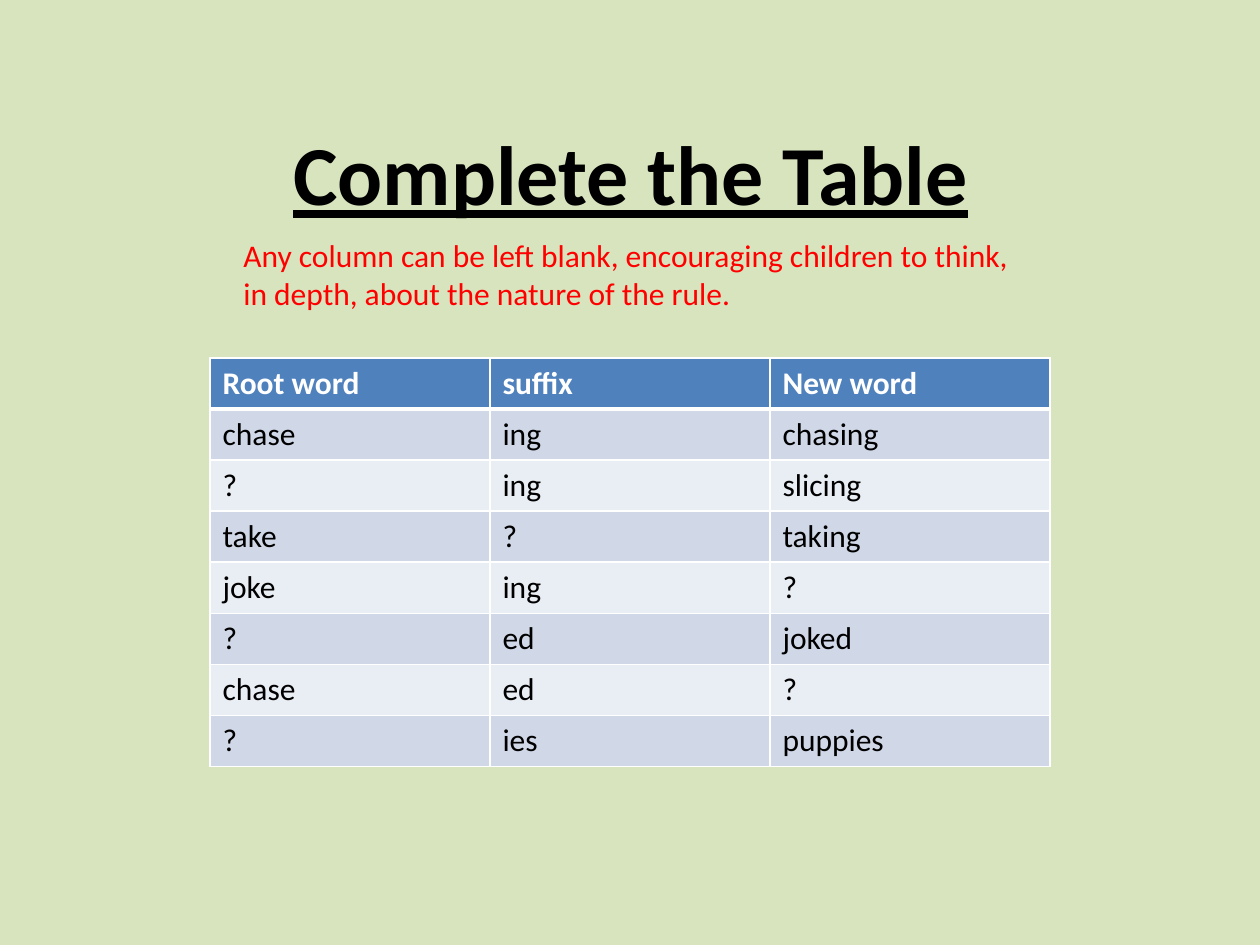
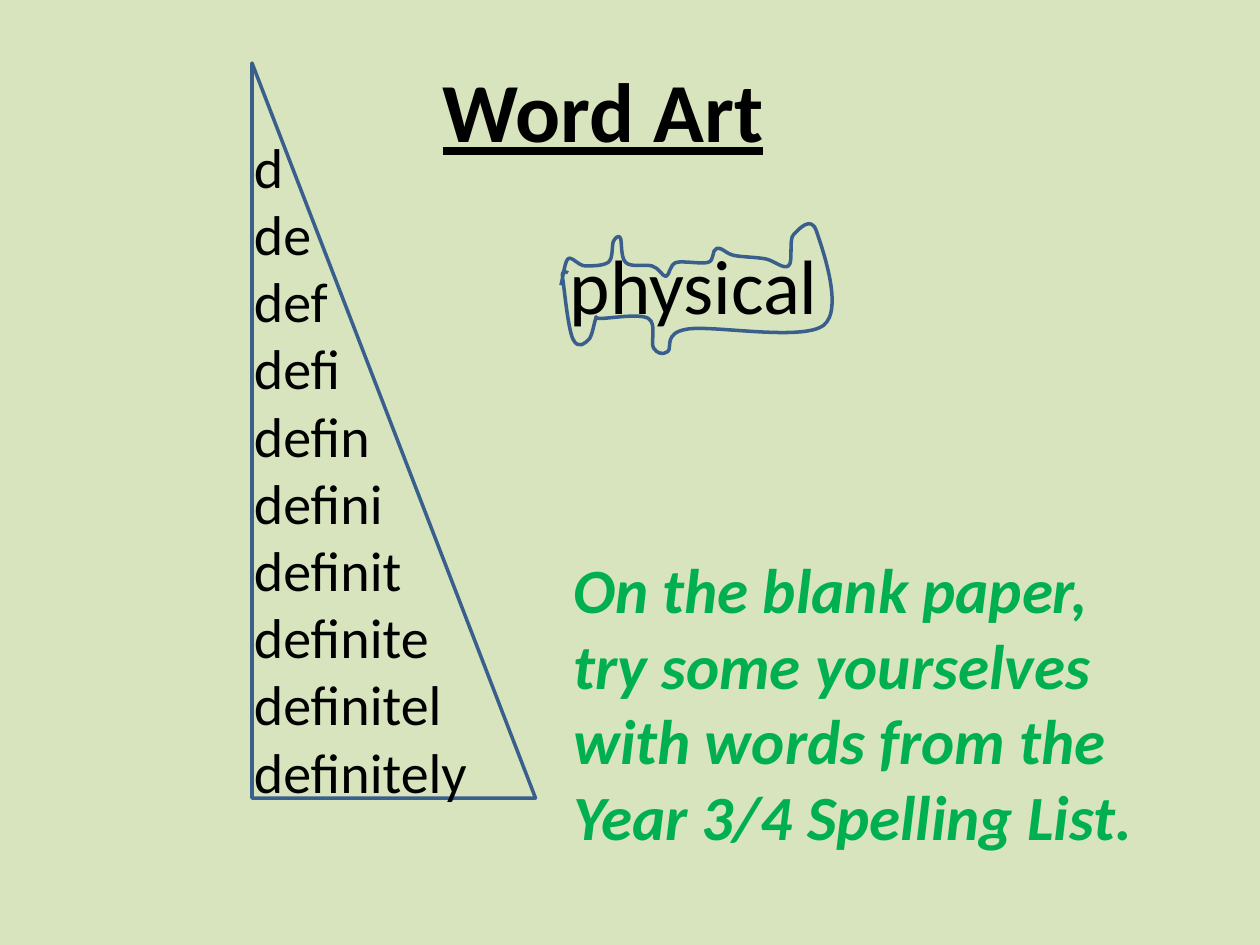
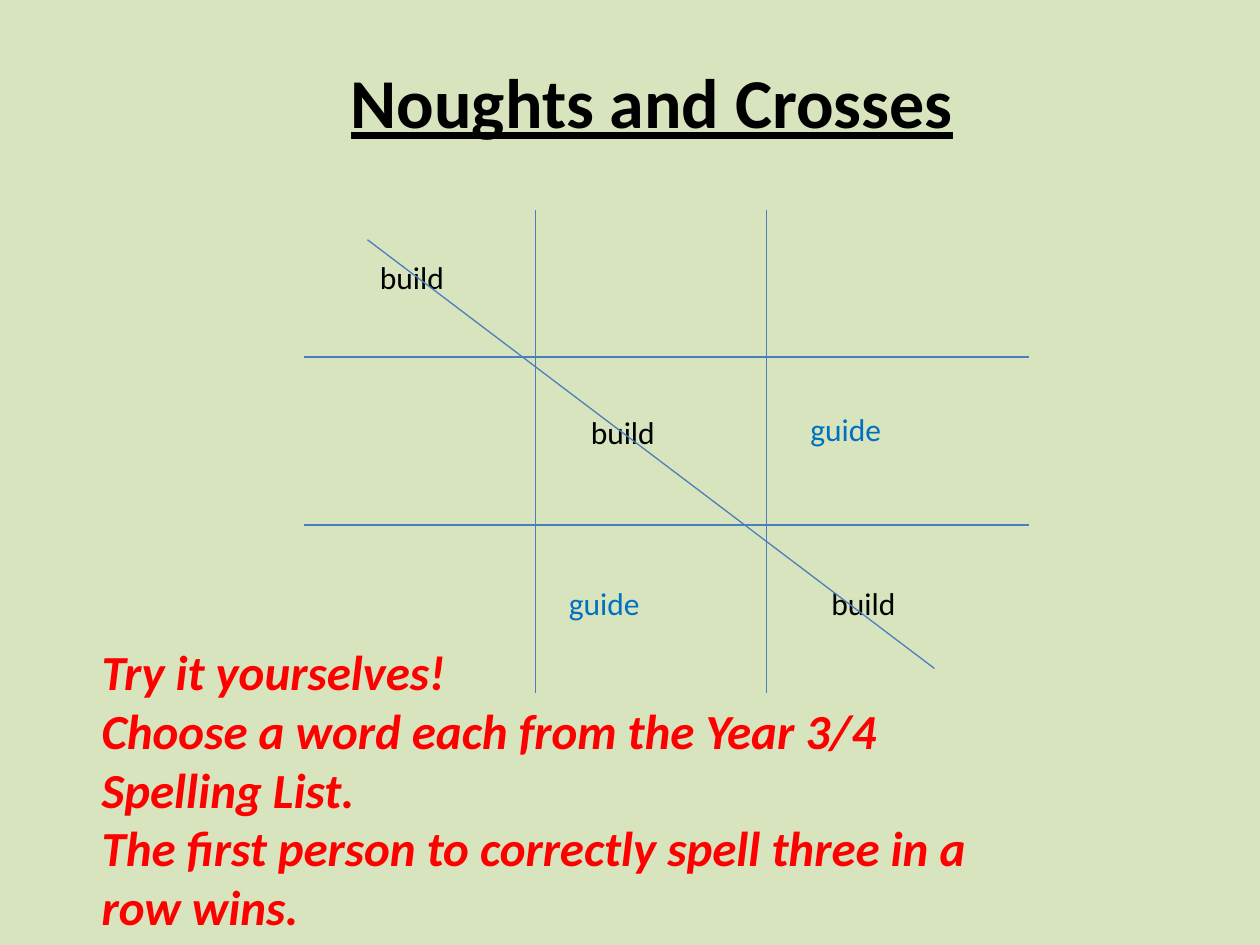
from dataclasses import dataclass

from lxml import etree
from pptx import Presentation
from pptx.dml.color import RGBColor
from pptx.enum.shapes import MSO_CONNECTOR, MSO_SHAPE
from pptx.enum.text import MSO_AUTO_SIZE, PP_ALIGN
from pptx.oxml.ns import qn
from pptx.util import Pt

STRAIGHT = MSO_CONNECTOR.STRAIGHT
RIGHT_TRIANGLE = MSO_SHAPE.RIGHT_TRIANGLE
GROW = MSO_AUTO_SIZE.SHAPE_TO_FIT_TEXT
LEFT, CENTER = PP_ALIGN.LEFT, PP_ALIGN.CENTER
BLANK_LAYOUT = 6


@dataclass(frozen=True)
class Theme:
    font: str = "Calibri"
    background: str = "D7E4BD"
    ink: str = "000000"
    white: str = "FFFFFF"
    red: str = "FF0000"
    green: str = "00B050"
    blue: str = "0070C0"
    outline: str = "3A5F8C"
    board: str = "4B7EBC"
    header: str = "4F81BD"
    bands: tuple = ("D0D8E8", "E9EDF4")
    small: int = 18
    task: int = 28
    pyramid: int = 32
    prompt: int = 36
    heading: int = 40
    word: int = 44
    title: int = 48


@dataclass(frozen=True)
class Box:
    left: float
    top: float
    width: float
    height: float

    def inner(self, x, y, width, height):
        return Box(self.left + x, self.top + y, width, height)

    def lengths(self):
        return [Pt(n) for n in (self.left, self.top, self.width, self.height)]


THEME = Theme()
TITLE = {"bold": True, "underline": True}
CALL = {"bold": True, "italic": True}

SUFFIX_ROWS = [
    ("Root word", "suffix", "New word"),
    ("chase", "ing", "chasing"),
    ("?", "ing", "slicing"),
    ("take", "?", "taking"),
    ("joke", "ing", "?"),
    ("?", "ed", "joked"),
    ("chase", "ed", "?"),
    ("?", "ies", "puppies"),
]

LETTER_CONTOUR = {
    "p bowl": [(0, 35), (4, 20), (14, 24)],
    "h stem": [(27, 22), (30, 10), (34, 8), (37, 22)],
    "y fork": [(52, 24), (60, 30), (66, 22)],
    "s top": [(84, 22)],
    "i dot": [(89, 14), (99, 18)],
    "ca top": [(117, 20), (130, 24)],
    "l stem": [(133, 6), (146, 4), (150, 58)],
    "y tail": [(73, 60), (61, 73), (53, 71), (50, 54)],
    "p tail": [(23, 54), (20, 54), (16, 66), (7, 66)],
    "p return": [(1, 31), (4, 28)],
}


def rgb(value):
    return RGBColor.from_string(value)


def format_font(font, size, color, style):
    values = {"name": THEME.font, "size": Pt(size), **style}
    for name, value in values.items():
        setattr(font, name, value)
    font.color.rgb = rgb(color)


def add_text(slide, box, lines, size, color=THEME.ink, style={}, align=LEFT):
    frame = slide.shapes.add_textbox(*box.lengths()).text_frame
    frame.word_wrap = True
    frame.auto_size = GROW
    for index, line in enumerate(lines):
        paragraph = frame.add_paragraph() if index else frame.paragraphs[0]
        paragraph.alignment = align
        run = paragraph.add_run()
        run.text = line
        format_font(run.font, size, color, style)


def draw_outline(shape):
    shape.shadow.inherit = False
    shape.fill.background()
    shape.line.color.rgb = rgb(THEME.outline)
    shape.line.width = Pt(2)


def shift(point, before, after, share):
    return tuple(p + (a - b) * share for p, b, a in zip(point, before, after))


def smooth_controls(points):
    padded = [points[0], *points, points[-1]]
    controls = []
    for before, start, end, after in zip(padded, padded[1:], padded[2:], padded[3:]):
        controls += [shift(start, before, end, 1 / 6), shift(end, start, after, -1 / 6), end]
    return controls


def add_smooth_outline(slide, box, points):
    builder = slide.shapes.build_freeform(*points[0], scale=Pt(1))
    builder.add_line_segments(smooth_controls(points), close=False)
    outline = builder.convert_to_shape(Pt(box.left), Pt(box.top))
    draw_outline(outline)
    segments = list(outline.element.iter(qn("a:lnTo")))
    for first in range(0, len(segments), 3):
        curve = etree.Element(qn("a:cubicBezTo"))
        segments[first].addprevious(curve)
        for segment in segments[first:first + 3]:
            curve.append(segment[0])
            segment.getparent().remove(segment)


def add_rule(slide, box, start, end):
    x1, y1, x2, y2 = (
        Pt(n) for n in (box.left + start[0], box.top + start[1],
                        box.left + end[0], box.top + end[1])
    )
    rule = slide.shapes.add_connector(STRAIGHT, x1, y1, x2, y2)
    rule.line.color.rgb = rgb(THEME.board)
    rule.line.width = Pt(0.75)
    etree.SubElement(rule.element.spPr, qn("a:effectLst"))


def add_borders(cell, widths):
    properties = cell._tc.get_or_add_tcPr()
    for side, width in widths.items():
        border = etree.SubElement(properties, qn(f"a:ln{side}"), w=str(Pt(width)))
        fill = etree.SubElement(border, qn("a:solidFill"))
        etree.SubElement(fill, qn("a:srgbClr"), val=THEME.white)


def suffix_table(slide, box):
    row_count, column_count = len(SUFFIX_ROWS), len(SUFFIX_ROWS[0])
    table = slide.shapes.add_table(row_count, column_count, *box.lengths()).table
    for column in table.columns:
        column.width = Pt(box.width / column_count)
    for index, words in enumerate(SUFFIX_ROWS):
        table.rows[index].height = Pt(box.height / row_count)
        is_header = index == 0
        fill = THEME.header if is_header else THEME.bands[(index - 1) % 2]
        color = THEME.white if is_header else THEME.ink
        widths = {"L": 1, "R": 1, "T": 3 if index == 1 else 1, "B": 3 if is_header else 1}
        for cell, word in zip(table.rows[index].cells, words):
            add_borders(cell, widths)
            cell.fill.solid()
            cell.fill.fore_color.rgb = rgb(fill)
            cell.text = word
            run = cell.text_frame.paragraphs[0].runs[0]
            format_font(run.font, THEME.small, color, {"bold": is_header})


def word_pyramid(slide, box, word):
    draw_outline(slide.shapes.add_shape(RIGHT_TRIANGLE, *box.lengths()))
    steps = [word[:count] for count in range(1, len(word) + 1)]
    add_text(slide, box.inner(-6, 36, 178, 395), steps, THEME.pyramid)


def outlined_word(slide, box, word):
    add_text(slide, box.inner(-2, 4, 366, 60), [word], THEME.word)
    contour = [point for part in LETTER_CONTOUR.values() for point in part]
    add_smooth_outline(slide, box, contour)


def game_board(slide, box):
    for x in (132, 264):
        add_rule(slide, box, (x, 0), (x, box.height))
    for y in (84, 180):
        add_rule(slide, box, (0, y), (box.width, y))
    moves = {
        ("build", THEME.ink): [(36, 24), (156.5, 112.5), (294, 210)],
        ("guide", THEME.blue): [(144, 210), (282, 110.5)],
    }
    for (word, color), places in moves.items():
        for x, y in places:
            add_text(slide, box.inner(x, y, 84, 29), [word], THEME.small, color)
    add_rule(slide, box, (36, 17), (360, 262))


def table_slide(slide, box):
    suffix_table(slide, box.inner(120, 204.5, 480, 233.6))
    add_text(slide, box.inner(160.5, 66, 402, 65.5), ["Complete the Table"],
             THEME.title, style=TITLE)
    add_text(slide, box.inner(132, 131.5, 468, 51),
             ["Any column can be left blank, encouraging children to think, "
              "in depth, about the nature of the rule."],
             THEME.small, THEME.red)


def word_art_slide(slide, box):
    word_pyramid(slide, box.inner(144, 36, 162, 420), "definitely")
    add_text(slide, box.inner(246, 30, 384, 65.5), ["Word Art"],
             THEME.title, style=TITLE)
    outlined_word(slide, box.inner(320.5, 128, 155, 75), "physical")
    add_text(slide, box.inner(320.5, 311, 351, 181.5),
             ["On the blank paper,",
              "try some yourselves with words from the Year 3/4 Spelling List."],
             THEME.prompt, THEME.green, CALL)


def noughts_slide(slide, box):
    add_text(slide, box.inner(153.5, 30, 438, 55.5), ["Noughts and Crosses"],
             THEME.heading, style=TITLE, align=CENTER)
    game_board(slide, box.inner(174, 120, 414, 276))
    add_text(slide, box.inner(51, 363, 510, 177),
             ["Try it yourselves!",
              "Choose a word each from the Year 3/4 Spelling List.",
              "The first person to correctly spell three in a row wins."],
             THEME.task, THEME.red, CALL)


def main():
    deck = Presentation()
    page = Box(0, 0, 720, 540)
    deck.slide_width, deck.slide_height = Pt(page.width), Pt(page.height)
    for fill_slide in (table_slide, word_art_slide, noughts_slide):
        slide = deck.slides.add_slide(deck.slide_layouts[BLANK_LAYOUT])
        slide.background.fill.solid()
        slide.background.fill.fore_color.rgb = rgb(THEME.background)
        fill_slide(slide, page)
    deck.save("out.pptx")


if __name__ == "__main__":
    main()
